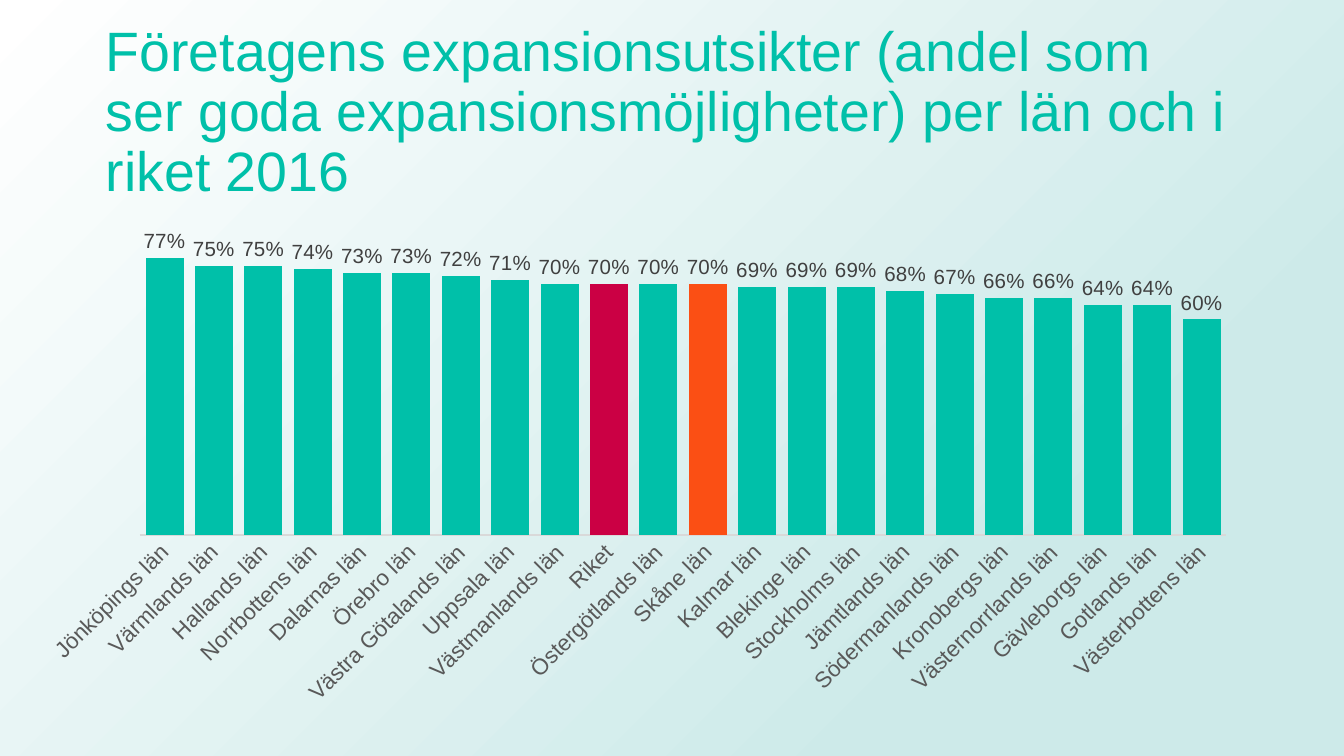
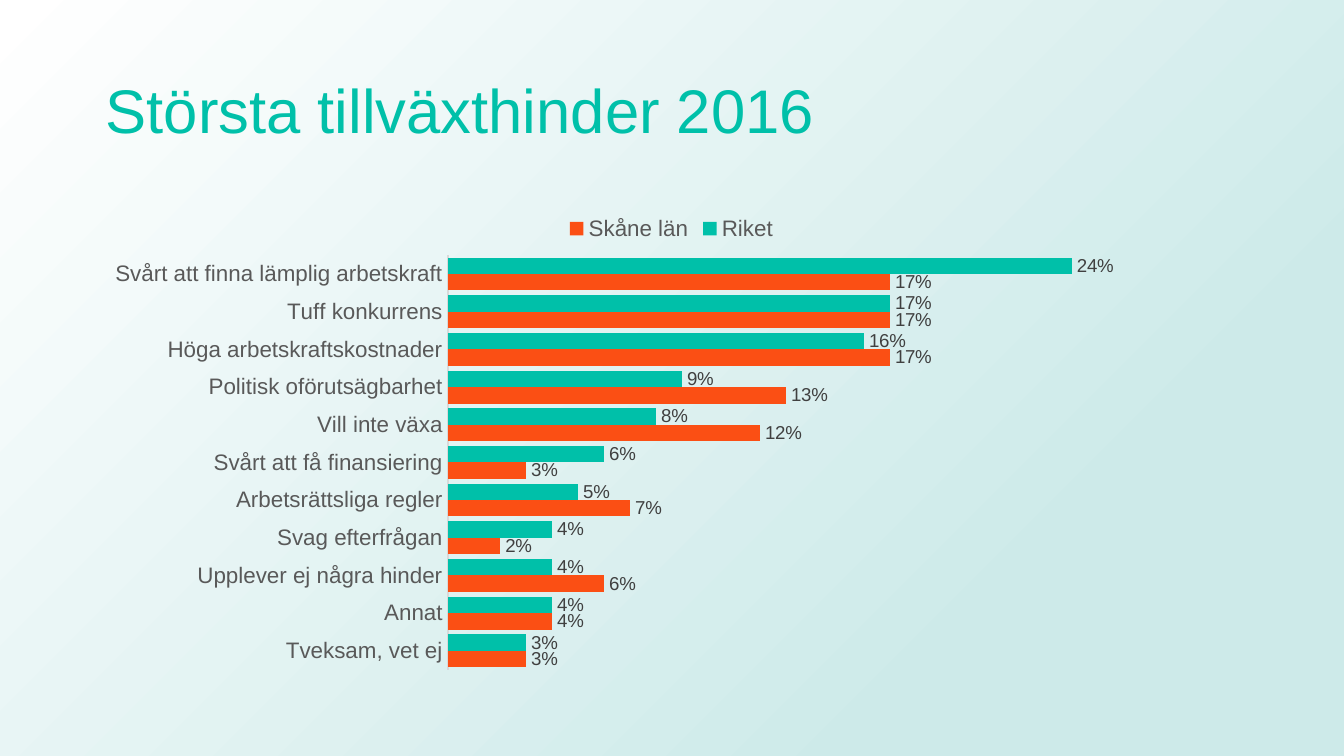
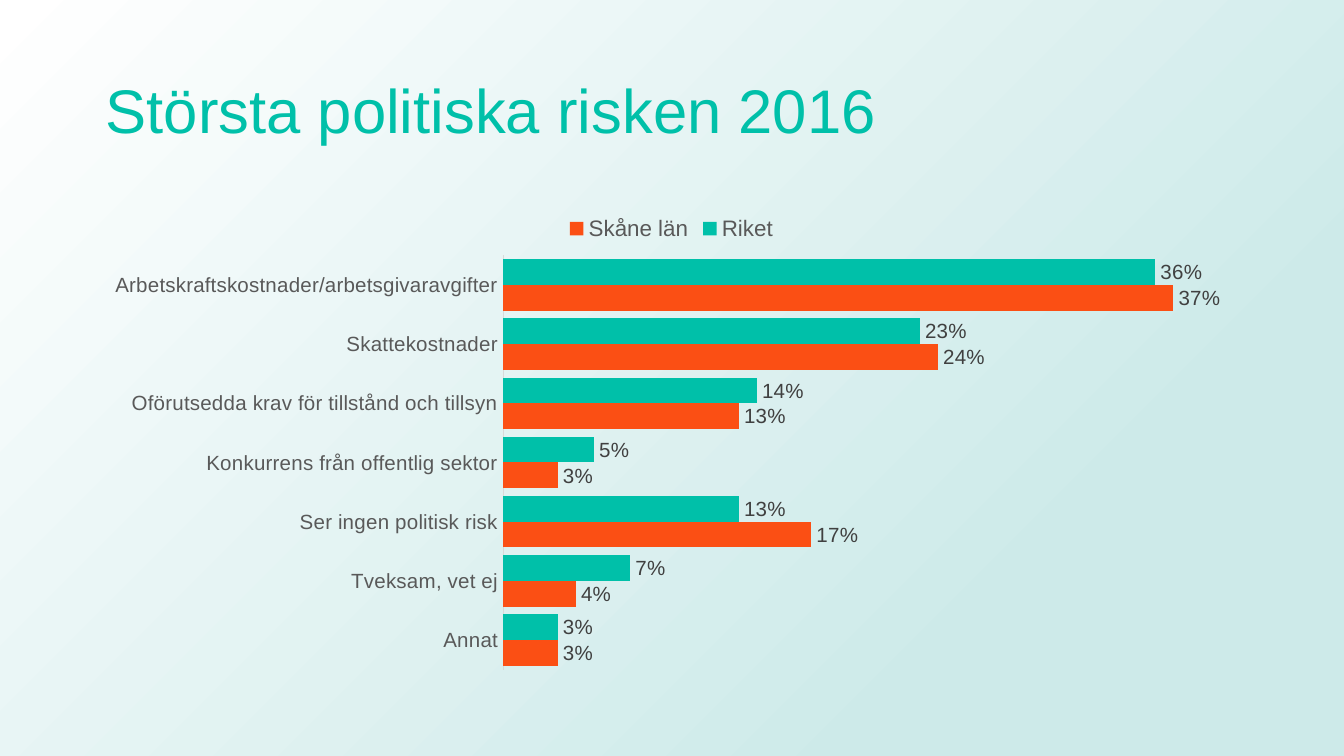
from dataclasses import dataclass

from lxml.etree import SubElement
from pptx import Presentation
from pptx.chart.data import CategoryChartData
from pptx.dml.color import RGBColor
from pptx.enum.chart import XL_CHART_TYPE as ChartType
from pptx.enum.chart import XL_LABEL_POSITION as LabelPos
from pptx.enum.chart import XL_LEGEND_POSITION as LegendPos
from pptx.enum.chart import XL_TICK_LABEL_POSITION as TickLabelPos
from pptx.enum.chart import XL_TICK_MARK as TickMark
from pptx.enum.shapes import MSO_SHAPE as Shape
from pptx.enum.text import MSO_ANCHOR as Anchor
from pptx.oxml.ns import qn
from pptx.util import Cm, Pt


@dataclass(frozen=True)
class Theme:
    font: str = "Arial"
    chart_font: str = "Calibri"
    teal: str = "00C0A9"
    orange: str = "FB4F14"
    red: str = "CB0044"
    mist: str = "CDEAE9"
    white: str = "FFFFFF"
    black: str = "000000"
    label: str = "404040"
    axis: str = "595959"
    axis_line: str = "D9D9D9"
    title_size: float = 33
    long_title_size: float = 29.7
    text_size: float = 12
    small_size: float = 11
    tiny_size: float = 10


T = Theme()
WIDTH, HEIGHT = Cm(25.4), Cm(14.29)
LEFT, CONTENT_WIDTH = Cm(1.74), Cm(21.9)
CHART_TOP = Cm(3.81)
PERCENT = "0%"

EXPANSION = [
    ("Jönköpings län", 0.77), ("Värmlands län", 0.75), ("Hallands län", 0.75),
    ("Norrbottens län", 0.74), ("Dalarnas län", 0.73), ("Örebro län", 0.73),
    ("Västra Götalands län", 0.72), ("Uppsala län", 0.71),
    ("Västmanlands län", 0.7), ("Riket", 0.7), ("Östergötlands län", 0.7),
    ("Skåne län", 0.7), ("Kalmar län", 0.69), ("Blekinge län", 0.69),
    ("Stockholms län", 0.69), ("Jämtlands län", 0.68),
    ("Södermanlands län", 0.67), ("Kronobergs län", 0.66),
    ("Västernorrlands län", 0.66), ("Gävleborgs län", 0.64),
    ("Gotlands län", 0.64), ("Västerbottens län", 0.6),
]

# Each row: category, Riket, Skåne län
OBSTACLES = [
    ("Svårt att finna lämplig arbetskraft", 0.24, 0.17),
    ("Tuff konkurrens", 0.17, 0.17),
    ("Höga arbetskraftskostnader", 0.16, 0.17),
    ("Politisk oförutsägbarhet", 0.09, 0.13),
    ("Vill inte växa", 0.08, 0.12),
    ("Svårt att få finansiering", 0.06, 0.03),
    ("Arbetsrättsliga regler", 0.05, 0.07),
    ("Svag efterfrågan", 0.04, 0.02),
    ("Upplever ej några hinder", 0.04, 0.06),
    ("Annat", 0.04, 0.04),
    ("Tveksam, vet ej", 0.03, 0.03),
]
RISKS = [
    ("Arbetskraftskostnader/arbetsgivaravgifter", 0.36, 0.37),
    ("Skattekostnader", 0.23, 0.24),
    ("Oförutsedda krav för tillstånd och tillsyn", 0.14, 0.13),
    ("Konkurrens från offentlig sektor", 0.05, 0.03),
    ("Ser ingen politisk risk", 0.13, 0.17),
    ("Tveksam, vet ej", 0.07, 0.04),
    ("Annat", 0.03, 0.03),
]


def style_font(font, size, color, name=T.font):
    font.name, font.size = name, Pt(size)
    font.color.rgb = RGBColor.from_string(color)


def paint(fill, color):
    fill.solid()
    fill.fore_color.rgb = RGBColor.from_string(color)


def add_master_backdrop(prs, s):
    """Draw the gradient on a slide, then move it to the master behind everything."""
    sp = s.shapes.add_shape(Shape.RECTANGLE, 0, 0, WIDTH, HEIGHT)
    sp.shadow.inherit = False
    sp.line.fill.background()
    sp.fill.gradient()
    for stop, color, position in zip(sp.fill.gradient_stops,
                                     (T.mist, T.white), (0.23, 1)):
        stop.color.rgb = RGBColor.from_string(color)
        stop.position = position
    grad = sp._element.spPr.find(qn("a:gradFill"))
    grad.remove(grad.find(qn("a:lin")))
    circle = SubElement(grad, qn("a:path"), {"path": "circle"})
    SubElement(circle, qn("a:fillToRect"), l="100000", t="100000")
    prs.slide_master.element.cSld.spTree.insert(2, sp._element)


def add_title(s, text, size=T.title_size):
    tf = s.shapes.add_textbox(LEFT, Cm(0.76), CONTENT_WIDTH, Cm(2.77)).text_frame
    tf.word_wrap = True
    tf.vertical_anchor = Anchor.MIDDLE
    tf.margin_left = tf.margin_right = Cm(0.26)
    tf.margin_top = tf.margin_bottom = Cm(0.1)
    p = tf.paragraphs[0]
    p.line_spacing = 0.9
    r = p.add_run()
    r.text = text
    style_font(r.font, size, T.teal)


def style_series(series, color, label_size):
    paint(series.format.fill, color)
    series.invert_if_negative = False
    labels = series.data_labels
    labels.show_value = True
    labels.position = LabelPos.OUTSIDE_END
    labels.number_format, labels.number_format_is_linked = PERCENT, False
    style_font(labels.font, label_size, T.label)


def style_axes(chart, category_size, top_value):
    axis = chart.category_axis
    axis.major_tick_mark = axis.minor_tick_mark = TickMark.NONE
    axis.tick_label_position = TickLabelPos.NEXT_TO_AXIS
    axis.has_major_gridlines = False
    style_font(axis.tick_labels.font, category_size, T.axis)
    axis.format.line.width = Pt(0.75)
    axis.format.line.color.rgb = RGBColor.from_string(T.axis_line)
    values = chart.value_axis
    values.visible = values.has_major_gridlines = False
    values.minimum_scale, values.maximum_scale = 0, top_value
    values.tick_labels.number_format = PERCENT
    values.tick_labels.number_format_is_linked = False


def add_percent_chart(s, kind, box, rows, series, top_value,
                      category_size, label_size):
    """Add a clustered chart; series lists (name, colour) in column order."""
    names, *columns = zip(*rows)
    data = CategoryChartData(number_format=PERCENT)
    data.categories = names
    for (name, _), values in zip(series, columns):
        data.add_series(name, values)
    chart = s.shapes.add_chart(kind, *box, data).chart
    chart.has_title = chart.has_legend = False
    style_font(chart.font, T.tiny_size, T.black, T.chart_font)
    plot = chart.plots[0]
    plot.gap_width, plot.overlap, plot.vary_by_categories = 30, 0, False
    for drawn, (_, color) in zip(plot.series, series):
        style_series(drawn, color, label_size)
    style_axes(chart, category_size, top_value)
    return chart


def add_county_chart(s):
    box = Cm(0.49), CHART_TOP, Cm(23.15), Cm(9.71)
    chart = add_percent_chart(s, ChartType.COLUMN_CLUSTERED, box, EXPANSION,
                              [("Series 1", T.teal)], 0.9,
                              T.text_size, T.small_size)
    counties = [name for name, _ in EXPANSION]
    for name, color in (("Riket", T.red), ("Skåne län", T.orange)):
        point = chart.series[0].points[counties.index(name)]
        paint(point.format.fill, color)


def add_comparison_chart(s, rows, top_value, category_size, label_size):
    box = LEFT, CHART_TOP, CONTENT_WIDTH, Cm(9.03)
    chart = add_percent_chart(s, ChartType.BAR_CLUSTERED, box, rows,
                              [("Riket", T.teal), ("Skåne län", T.orange)],
                              top_value, category_size, label_size)
    chart.category_axis.reverse_order = True
    chart.has_legend = True
    chart.legend.position = LegendPos.TOP
    chart.legend.include_in_layout = False
    style_font(chart.legend.font, T.text_size, T.axis)


def main():
    prs = Presentation()
    prs.slide_width, prs.slide_height = WIDTH, HEIGHT
    blank = prs.slide_layouts[6]
    expansion, obstacles, risks = (prs.slides.add_slide(blank) for _ in range(3))
    add_master_backdrop(prs, expansion)

    add_title(expansion, "Företagens expansionsutsikter (andel som ser goda "
              "expansionsmöjligheter) per län och i riket 2016",
              T.long_title_size)
    add_county_chart(expansion)

    add_title(obstacles, "Största tillväxthinder 2016")
    add_comparison_chart(obstacles, OBSTACLES, 0.3, T.text_size, T.tiny_size)

    add_title(risks, "Största politiska risken 2016")
    add_comparison_chart(risks, RISKS, 0.4, T.small_size, T.small_size)

    prs.save("out.pptx")


if __name__ == "__main__":
    main()
